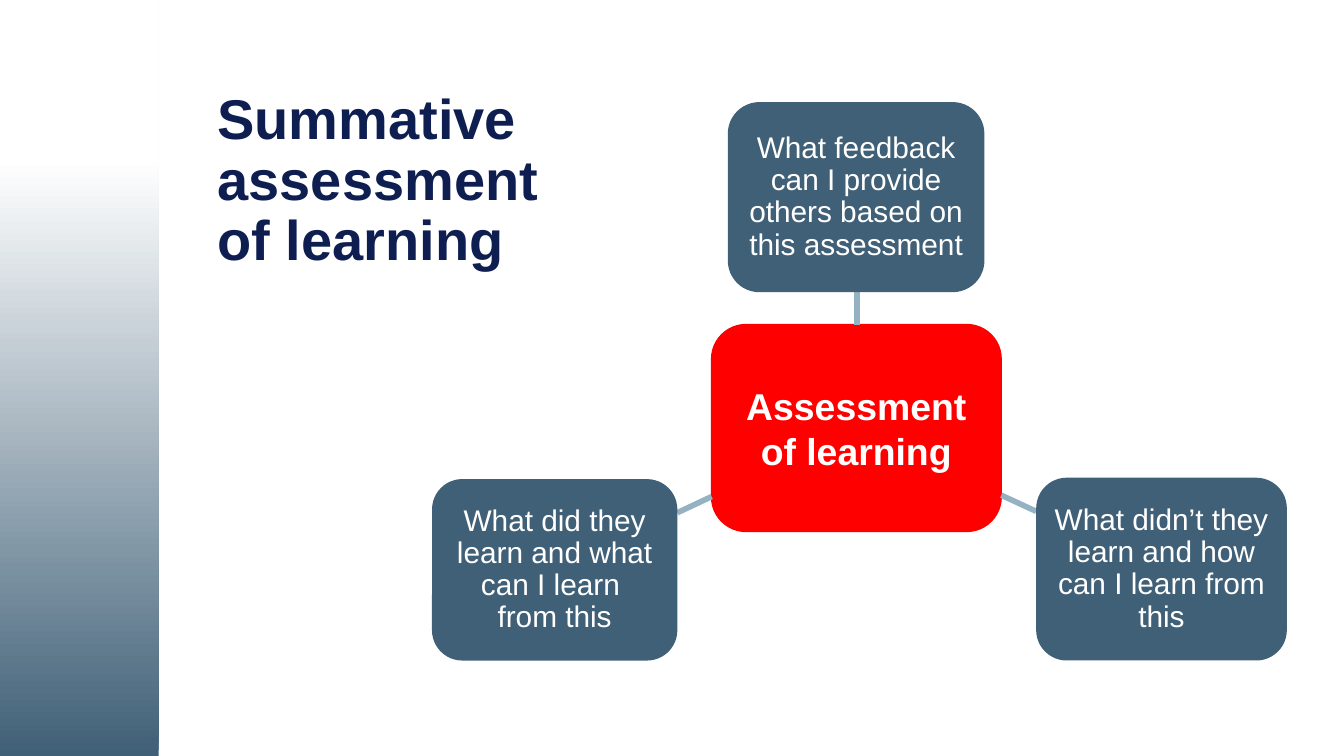
from pptx import Presentation
from pptx.dml.color import RGBColor
from pptx.enum.shapes import MSO_CONNECTOR, MSO_SHAPE
from pptx.enum.text import MSO_ANCHOR, PP_ALIGN
from pptx.oxml.ns import qn
from pptx.util import Pt
from lxml import etree

PX = 4572  # EMU per px, at 200 px to the inch
SLIDE_W, SLIDE_H = 2000, 1125

SLATE = RGBColor(0x40, 0x60, 0x77)
RED = RGBColor(0xFF, 0x00, 0x00)
PALE_BLUE = RGBColor(0x95, 0xB2, 0xC2)
NAVY = RGBColor(0x0F, 0x1E, 0x50)
WHITE = RGBColor(0xFF, 0xFF, 0xFF)

RECT, ROUNDED = MSO_SHAPE.RECTANGLE, MSO_SHAPE.ROUNDED_RECTANGLE
STRAIGHT = MSO_CONNECTOR.STRAIGHT
MIDDLE = MSO_ANCHOR.MIDDLE
LEFT, CENTER = PP_ALIGN.LEFT, PP_ALIGN.CENTER

# Question boxes: left, top, width, height, lines of text
QUESTIONS = [
    (1083, 152, 382, 283,
     ["What feedback can I provide others based on this assessment"]),
    (1542, 711, 373, 272,
     ["What didn’t they learn and how can I learn from this"]),
    (643, 713, 365, 270,
     ["What did they learn and what can I learn ", "from this"]),
]

# Links from the centre to the questions: x1, y1, x2, y2
LINKS = [
    (1275, 483, 1275, 435),
    (1490, 737, 1542, 761),
    (1059, 739, 1008, 763),
]


def px(*lengths):
    return [length * PX for length in lengths]


def write_text(frame, lines, size, color, bold=False, align=CENTER, spacing=1.0):
    frame.word_wrap = True
    frame.vertical_anchor = MIDDLE
    paragraph = frame.paragraphs[0]
    paragraph.alignment = align
    paragraph.line_spacing = spacing
    for index, line in enumerate(lines):
        if index:
            paragraph.add_line_break()
        run = paragraph.add_run()
        run.text = line
        run.font.name = "Arial"
        run.font.size = Pt(size)
        run.font.bold = bold
        run.font.color.rgb = color


def add_side_band(slide):
    band = slide.shapes.add_shape(RECT, *px(0, 0, 236, SLIDE_H))
    band.shadow.inherit = False
    band.line.fill.background()
    band.fill.gradient()
    band.fill.gradient_angle = 90
    stops = zip(band.fill.gradient_stops, [(0, SLATE), (0.79, WHITE)])
    for stop, (position, color) in stops:
        stop.position = position
        stop.color.rgb = color


def add_title(slide, lines):
    title = slide.shapes.add_textbox(*px(304, 49, 618, 444))
    write_text(title.text_frame, lines, 30, NAVY, True, LEFT, 0.9)


def add_node(slide, bounds, color, inset, lines, size, **style):
    node = slide.shapes.add_shape(ROUNDED, *px(*bounds))
    node.shadow.inherit = False
    node.fill.solid()
    node.fill.fore_color.rgb = color
    node.line.fill.background()
    frame = node.text_frame
    frame.margin_left, frame.margin_top = px(inset, inset)
    frame.margin_right, frame.margin_bottom = px(inset, inset)
    write_text(frame, lines, size, WHITE, **style)
    return node


def add_link(slide, ends):
    link = slide.shapes.add_connector(STRAIGHT, *px(*ends))
    link.line.color.rgb = PALE_BLUE
    link.line.width = Pt(3)
    etree.SubElement(link._element.spPr, qn("a:effectLst"))


def main():
    prs = Presentation()
    prs.slide_width, prs.slide_height = px(SLIDE_W, SLIDE_H)
    slide = prs.slides.add_slide(prs.slide_layouts[6])

    # Side band and title
    add_side_band(slide)
    add_title(slide, ["Summative ", "assessment ", "of learning"])

    # Central topic
    topic = add_node(slide, (1059, 483, 431, 308), RED, 12,
                     ["Assessment of learning"], 20, bold=True)
    topic.line.color.rgb = RED
    topic.line.width = Pt(0.75)

    # Questions around it, each with its link
    for (*bounds, lines), ends in zip(QUESTIONS, LINKS):
        add_link(slide, ends)
        add_node(slide, bounds, SLATE, 8, lines, 16, spacing=0.9)

    prs.save("out.pptx")


if __name__ == "__main__":
    main()
